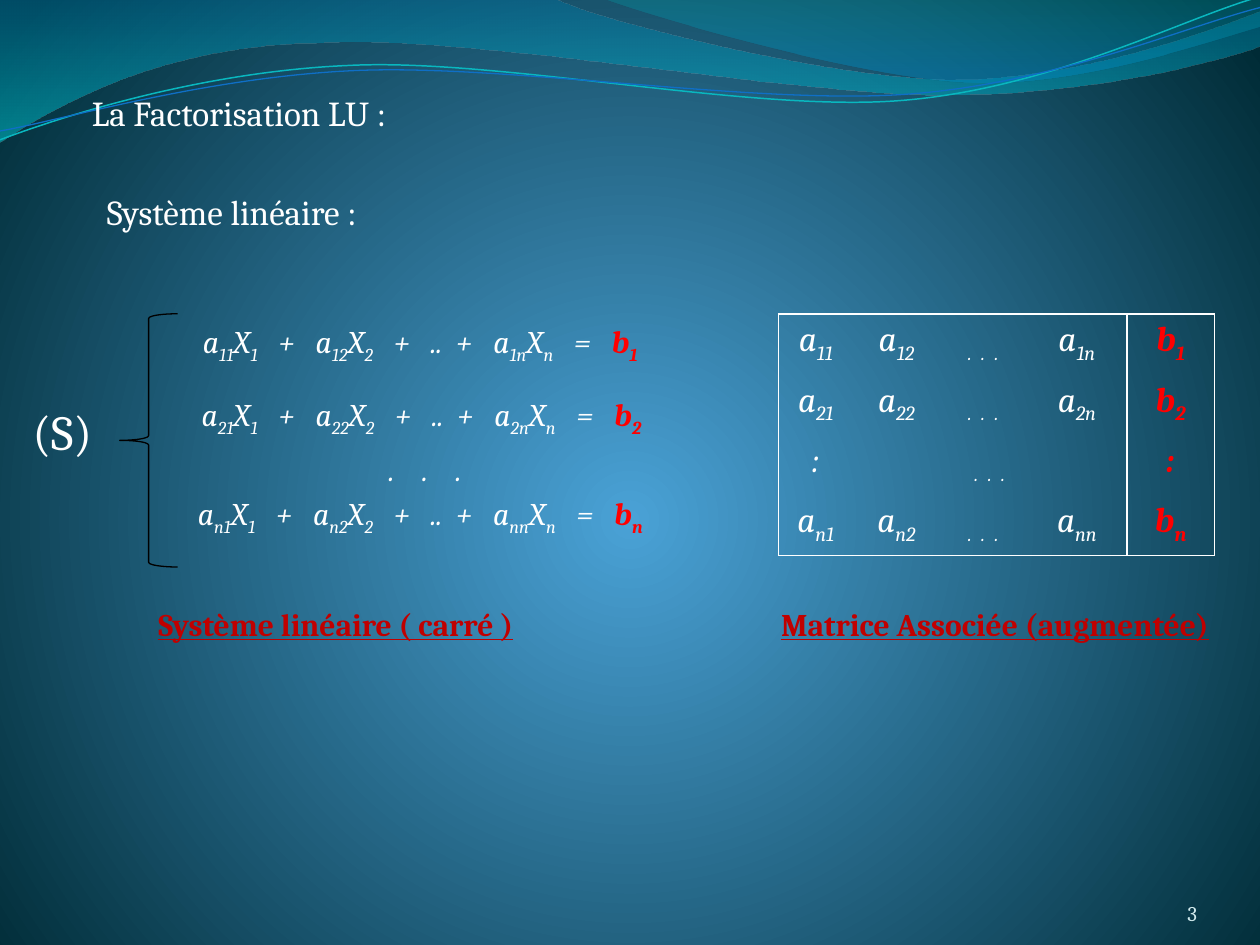
import pptx
import pptx.dml.color
import pptx.enum.shapes
import pptx.enum.text
import pptx.oxml
import pptx.oxml.ns
import pptx.util
from dataclasses import dataclass

ALIGN = pptx.enum.text.PP_ALIGN
ANCHOR = pptx.enum.text.MSO_ANCHOR


@dataclass(frozen=True)
class Theme:
    font: str = "Cambria"
    white: str = "FFFFFF"
    red: str = "FF0000"
    dark: str = "C00000"
    black: str = "000000"
    pale: str = "D1EAED"
    teal: str = "09B7BF"
    blue: str = "0F6FC6"
    back: tuple = ((0, "4AA2D6", 100), (100, "002B36", 100))
    wide: tuple = ((0, "0074A0", 45), (100, "00C4CD", 55))
    side: tuple = ((20, "008ABF", 45), (100, "00A0A8", 30))
    small: int = 12
    body: int = 18
    head: int = 20
    big: int = 28
    rule: float = 0.96


LOOK = Theme()
COLS, ROWS = 100, 75


def grid(count):
    return pptx.util.Inches(count / 10)


def tint(code):
    return pptx.dml.color.RGBColor.from_string(code)


def grad(stops, shade):
    marks = "".join(
        f'<a:gs pos="{pos * 1000}"><a:srgbClr val="{code}">'
        f'<a:alpha val="{part * 1000}"/></a:srgbClr></a:gs>'
        for pos, code, part in stops)
    return pptx.oxml.parse_xml(
        f'<a:gradFill {pptx.oxml.ns.nsdecls("a")} rotWithShape="1">'
        f'<a:gsLst>{marks}</a:gsLst>{shade}</a:gradFill>')


def paint(fill, owner, stops, shade):
    fill.solid()
    old = owner.find(pptx.oxml.ns.qn("a:solidFill"))
    owner.replace(old, grad(stops, shade))


def bend(shape, moves):
    name = pptx.oxml.ns.qn
    steps = iter(list(shape._element.spPr.iter(name("a:lnTo"))))
    for move in moves:
        group = [next(steps) for _ in move[::2]]
        if len(group) == 3:
            curve = pptx.oxml.parse_xml(
                f'<a:cubicBezTo {pptx.oxml.ns.nsdecls("a")}/>')
            group[0].addprevious(curve)
            for step in group:
                curve.append(step[0])
                step.getparent().remove(step)


def wave(slide, start, moves, stops=None, angle=0, color=None, width=0):
    inch = pptx.util.Inches
    spots = [(inch(x), inch(y)) for move in [start, *moves]
             for x, y in zip(move[::2], move[1::2])]
    pen = slide.shapes.build_freeform(*spots[0], scale=1.0)
    pen.add_line_segments(spots[1:], close=bool(stops))
    shape = pen.convert_to_shape()
    bend(shape, moves)
    shape.shadow.inherit = False
    if stops:
        paint(shape.fill, shape._element.spPr, stops,
              f'<a:lin ang="{angle * 60000}" scaled="0"/>')
        shape.line.fill.background()
    else:
        shape.fill.background()
        edge(shape, color, width)


def edge(shape, color, width):
    shape.line.color.rgb = tint(color)
    shape.line.width = pptx.util.Pt(width)


def write(para, text, size=LOOK.body, color=LOOK.white, bold=False,
          slant=False, under=False, align=ALIGN.LEFT, gap=0, low=False):
    para.alignment = align
    parts = text.split("|")
    for place, part in enumerate(parts):
        if not part:
            continue
        run = para.add_run()
        run.text = part
        font = run.font
        font.name = LOOK.font
        font.size = pptx.util.Pt(size)
        font.color.rgb = tint(color)
        font.bold, font.italic, font.underline = bold, slant, under
        props = run._r.get_or_add_rPr()
        if place % 2 or low:
            props.set("baseline", "-25000")
        ahead = place % 2 and "".join(parts[place + 1:place + 2]).startswith(" ")
        if gap and (" " in part or ahead):
            props.set("spc", str(round(gap * 100)))


def label(slide, area, text, anchor=ANCHOR.TOP, inset=True, **form):
    frame = slide.shapes.add_textbox(*map(grid, area)).text_frame
    frame.word_wrap = True
    frame.vertical_anchor = anchor
    if not inset:
        frame.margin_left = frame.margin_right = 0
        frame.margin_top = frame.margin_bottom = 0
    write(frame.paragraphs[0], text, **form)
    return frame.paragraphs[0]


def border(cell, sides):
    props = cell._tc.get_or_add_tcPr()
    for side in "LRTB":
        fill = (f'<a:solidFill><a:srgbClr val="{LOOK.white}"/></a:solidFill>'
                if side in sides else "<a:noFill/>")
        props.append(pptx.oxml.parse_xml(
            f'<a:ln{side} {pptx.oxml.ns.nsdecls("a")} '
            f'w="{pptx.util.Pt(LOOK.rule)}">{fill}</a:ln{side}>'))
    cell.fill.background()


def matrix(slide):
    dots = ". . ."
    rows = [[f"a|{n}1", f"a|{n}2", dots, f"a|{n}n", f"b|{n}"] for n in "12n"]
    rows.insert(2, [":", dots, "", "", ":"])
    table = slide.shapes.add_table(4, 5, *map(grid, (61.8, 24.9, 34.6, 19.2))).table
    table.first_row = table.horz_banding = False
    for col, width in zip(table.columns, (5.9, 6.9, 6.9, 7.95, 6.95)):
        col.width = grid(width)
    for row in table.rows:
        row.height = grid(4.8)
    table.cell(2, 1).merge(table.cell(2, 3))
    for r, row in enumerate(rows):
        for c, text in enumerate(row):
            cell = table.cell(r, c)
            last = c == 4
            sides = "L" * (c in (0, 4)) + "R" * (c > 2 or (r, c) == (2, 1))
            border(cell, sides + "T" * (r == 0) + "B" * (r == 3))
            if text:
                write(cell.text_frame.paragraphs[0], text, size=LOOK.head,
                      color=LOOK.red if last else LOOK.white, bold=last,
                      slant=True, align=ALIGN.CENTER, low=text == dots,
                      gap=1.5 if text == dots else 0)


def system(slide):
    form = dict(slant=True, align=ALIGN.CENTER)
    for n, left, top in zip("12n", (12.9, 13, 12.9), (25.3, 31.1, 38.95)):
        para = label(slide, (left, top, 40.9, 3.9),
                     f"a|{n}1|X|1| + ||a|{n}2|X|2| + ||..|| + ||a|{n}n|X|n| = ",
                     anchor=ANCHOR.MIDDLE, gap=4, **form)
        write(para, f"b|{n}", color=LOOK.red, bold=True, **form)
    label(slide, (13.3, 35.3, 40.9, 3.9), ". . .",
          anchor=ANCHOR.MIDDLE, gap=6, **form)


def brace(slide):
    kind = pptx.enum.shapes.MSO_SHAPE.LEFT_BRACE
    shape = slide.shapes.add_shape(kind, *map(grid, (9.5, 24.9, 4.6, 20.1)))
    shape.shadow.inherit = False
    shape.fill.background()
    edge(shape, LOOK.black, 0.75)
    shape.adjustments[0], shape.adjustments[1] = 0.08, 0.5


def scene(slide):
    fill = slide.background.fill
    fill.solid()
    paint(fill, slide._element.cSld.bg.bgPr, LOOK.back,
          '<a:path path="circle"><a:fillToRect l="50000" t="55000" '
          'r="50000" b="45000"/></a:path>')
    wave(slide, (0, 0), [
        (4.4, -0.01), (4.76, 0.17, 6.64, 0.63, 7.58, 0.63),
        (8.53, 0.63, 9.58, 0.26, 10, 0.09), (10.01, 0.36),
        (9.83, 0.44, 8.7, 0.76, 7.46, 0.75), (6.22, 0.75, 3.82, 0.28, 2.57, 0.34),
        (1.29, 0.35, 0.46, 0.83, -0.01, 1.13)], LOOK.wide, 90)
    wave(slide, (4.79, -0.01), [
        (5.09, 0.11, 6.82, 0.62, 7.69, 0.65), (8.56, 0.69, 9.61, 0.32, 10, 0.21),
        (10, 0)], LOOK.side, 270)
    wave(slide, (0, 1.11), [
        (0.48, 0.93, 1.58, 0.57, 2.77, 0.52), (3.95, 0.46, 5.93, 0.89, 7.13, 0.8),
        (8.33, 0.71, 9.38, 0.15, 9.98, -0.02)], color=LOOK.teal, width=0.85)
    wave(slide, (0, 1.04), [
        (0.47, 0.96, 1.64, 0.61, 2.83, 0.56), (4.03, 0.51, 5.97, 0.83, 7.17, 0.75),
        (8.36, 0.67, 9.41, 0.21, 10, 0.06)], color=LOOK.blue, width=0.75)


def main():
    deck = pptx.Presentation()
    deck.slide_width, deck.slide_height = grid(COLS), grid(ROWS)
    slide = deck.slides.add_slide(deck.slide_layouts[6])
    scene(slide)
    label(slide, (6.3, 6.8, 59.5, 4.4), "La Factorisation LU :", size=LOOK.head)
    label(slide, (7.5, 14.65, 32.9, 4.3), "Système linéaire :", size=LOOK.head)
    label(slide, (1.6, 31.4, 7.9, 5.7), "(S)", size=LOOK.big)
    brace(slide)
    system(slide)
    matrix(slide)
    title = dict(color=LOOK.dark, bold=True, under=True)
    label(slide, (11.6, 47.5, 34.6, 4), "Système linéaire ( carré )", **title)
    label(slide, (61, 47.5, 36.2, 7), "Matrice Associée (augmentée)", **title)
    label(slide, (86.7, 69.5, 8.3, 4), "3", anchor=ANCHOR.BOTTOM, inset=False,
          size=LOOK.small, color=LOOK.pale, align=ALIGN.RIGHT)
    deck.save("out.pptx")


if __name__ == "__main__":
    main()
